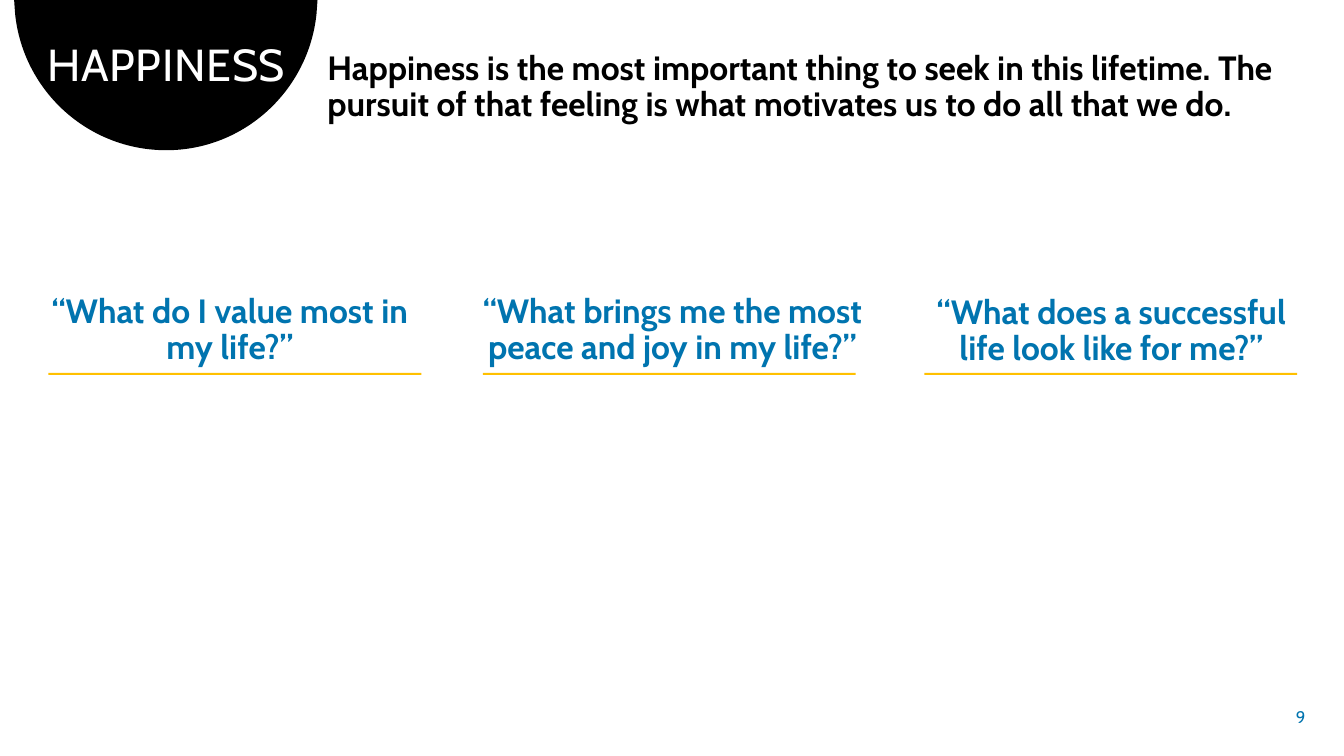
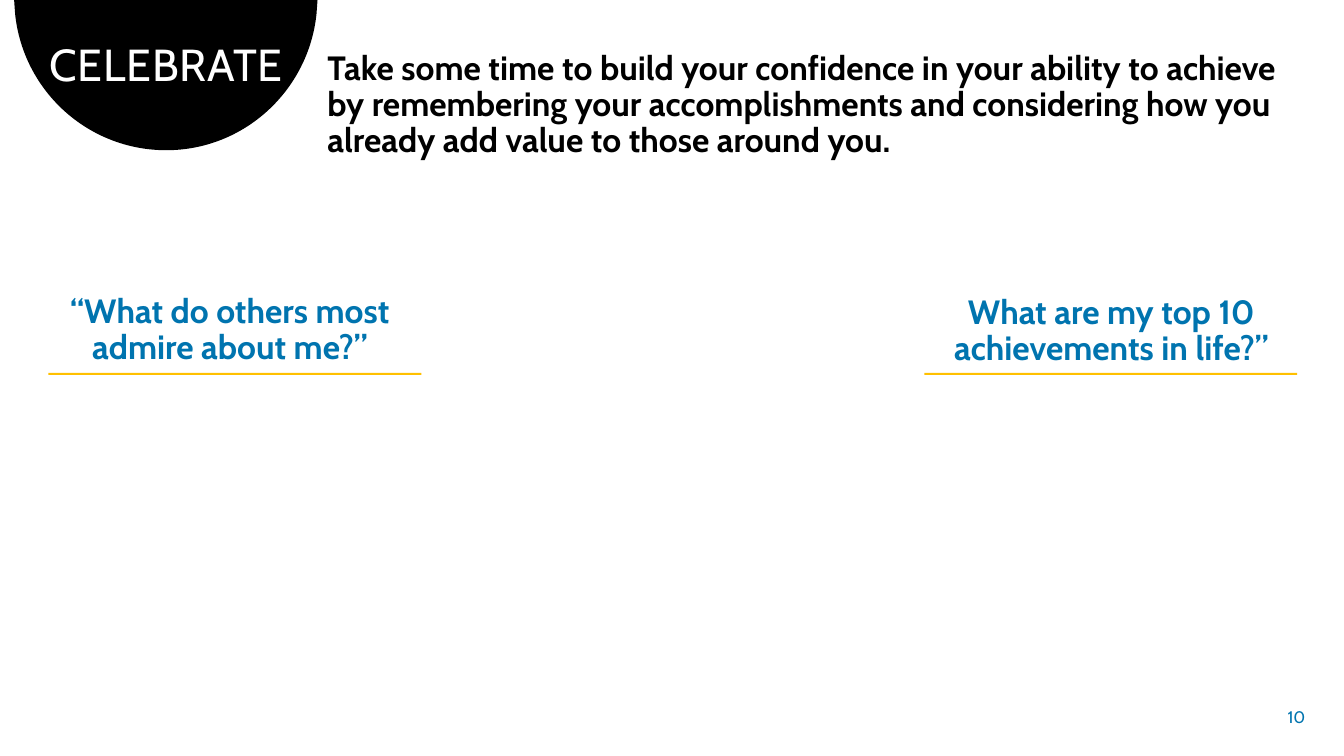
"""Build two coaching slides, each with a half-disc title, a statement and underlined questions."""
import lxml.etree
import pptx
import pptx.dml.color
import pptx.enum.shapes
import pptx.enum.text
import pptx.oxml.ns
import pptx.util

PX = 9144
FONT = "Cabin"
BLACK = pptx.dml.color.RGBColor(0x00, 0x00, 0x00)
WHITE = pptx.dml.color.RGBColor(0xFF, 0xFF, 0xFF)
BLUE = pptx.dml.color.RGBColor(0x00, 0x74, 0xAF)
GOLD = pptx.dml.color.RGBColor(0xFF, 0xC0, 0x00)
ALIGN = pptx.enum.text.PP_ALIGN
AUTO_SIZE = pptx.enum.text.MSO_AUTO_SIZE
qn = pptx.oxml.ns.qn

DISC_EDGE = [(315, 0), (314, 14)]
DISC_CURVES = [(306, 90), (242, 149), (165, 149), (87, 149), (23, 90), (15, 14)]
RULE_Y, RULE_W, RULE_H = 370, 370, 2
LEFT = ((25, 287, 406, 83), 48)
MIDDLE = ((457, 287, 420, 83), 479)
RIGHT = ((896, 288, 413, 83), 917)

SLIDES = [
    (9, "HAPPINESS",
     "Happiness is the most important thing to seek in this lifetime. "
     "The pursuit of that feeling is what motivates us to do all that we do.",
     [(LEFT, "“What do I value most in my life?”"),
      (MIDDLE, "“What brings me the most peace and joy in my life?”"),
      (RIGHT, "“What does a successful life look like for me?”")]),
    (10, "CELEBRATE",
     "Take some time to build your confidence in your ability to achieve "
     "by remembering your accomplishments and considering how you already "
     "add value to those around you.",
     [(LEFT, "“What do others most admire about me?”"),
      (RIGHT, "What are my top 10 achievements in life?”")]),
]


def add_text(s, box, text, size, color, align, bold=False, before=0, after=0, spacing=0.9):
    sp = s.shapes.add_textbox(*[v * PX for v in box])
    tf = sp.text_frame
    tf.word_wrap = True
    tf.auto_size = AUTO_SIZE.SHAPE_TO_FIT_TEXT
    tf.text = text
    p = tf.paragraphs[0]
    p.alignment = align
    p.line_spacing = spacing
    p.space_before = pptx.util.Pt(before)
    p.space_after = pptx.util.Pt(after)
    r = p.runs[0]
    r.font.name = FONT
    r.font.size = pptx.util.Pt(size)
    r.font.bold = bold
    r.font.color.rgb = color
    return sp


def paint(sp, color):
    sp.shadow.inherit = False
    sp.fill.solid()
    sp.fill.fore_color.rgb = color
    sp.line.fill.background()


prs = pptx.Presentation()
prs.slide_width = pptx.util.Emu(12192000)
prs.slide_height = 750 * PX

for number, title, statement, questions in SLIDES:
    s = prs.slides.add_slide(prs.slide_layouts[6])

    builder = s.shapes.build_freeform(14, 0, scale=PX)
    builder.add_line_segments(DISC_EDGE + DISC_CURVES, close=True)
    disc = builder.convert_to_shape()
    paint(disc, BLACK)
    lines = list(disc._element.iter(qn("a:lnTo")))[len(DISC_EDGE):]
    for i in range(0, len(lines), 3):
        curve = lxml.etree.Element(qn("a:cubicBezTo"))
        lines[i].addprevious(curve)
        for line in lines[i:i + 3]:
            curve.append(line[0])
            line.getparent().remove(line)

    sp = add_text(s, (35, 38, 260, 59), title, 32, WHITE, ALIGN.CENTER)
    sp.text_frame.paragraphs[0].runs[0].font._element.set("spc", "50")
    add_text(s, (315, 46, 993, 119), statement, 24, BLACK, ALIGN.LEFT, bold=True, before=10)

    for (box, rule_x), question in questions:
        add_text(s, box, question, 24, BLUE, ALIGN.CENTER, bold=True, before=10, after=24)
        rule = s.shapes.add_shape(pptx.enum.shapes.MSO_SHAPE.RECTANGLE,
                                  rule_x * PX, RULE_Y * PX, RULE_W * PX, RULE_H * PX)
        paint(rule, GOLD)

    sp = add_text(s, (1250, 691, 55, 40), str(number), 12, BLUE, ALIGN.RIGHT, spacing=1.0)
    sp.text_frame.auto_size = AUTO_SIZE.NONE
    sp.text_frame.word_wrap = False
    sp.text_frame.vertical_anchor = pptx.enum.text.MSO_ANCHOR.MIDDLE

prs.save("out.pptx")
